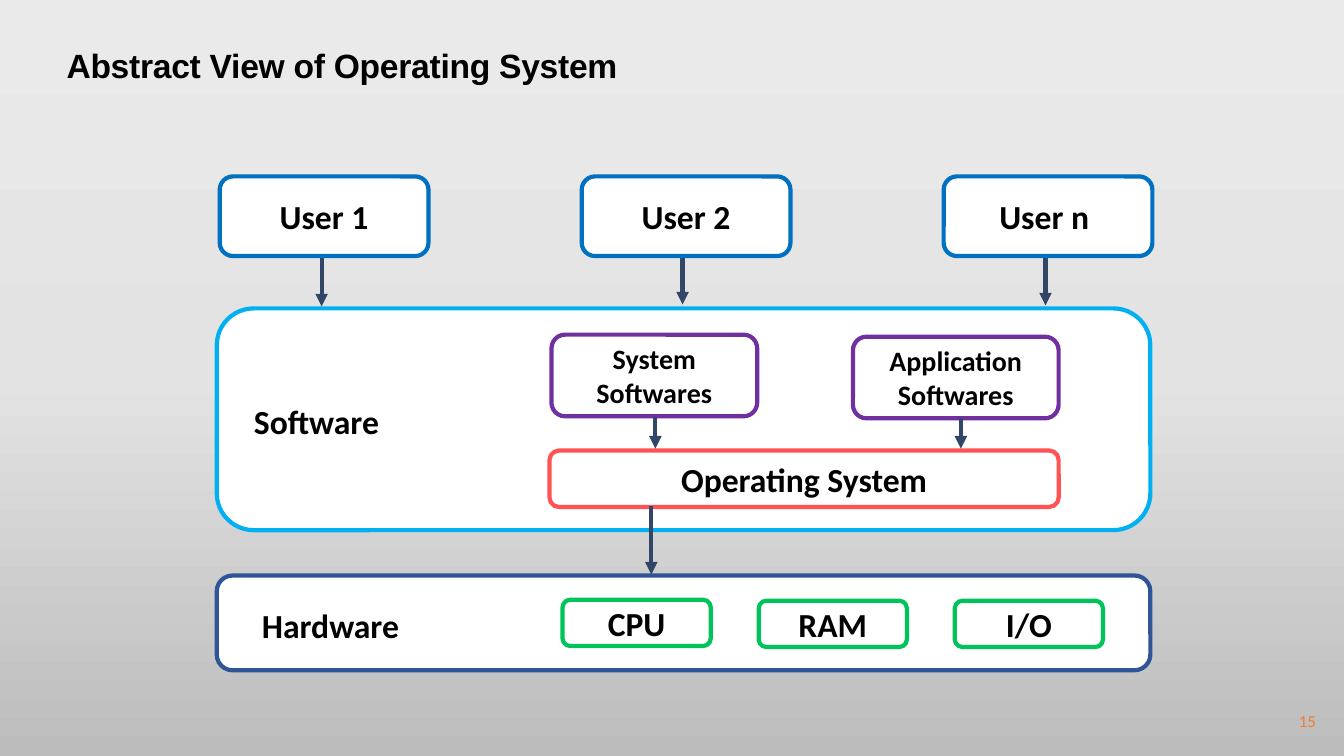
from copy import deepcopy
from dataclasses import dataclass

from lxml import etree
from pptx import Presentation
from pptx.dml.color import RGBColor
from pptx.enum.shapes import MSO_CONNECTOR, MSO_SHAPE
from pptx.enum.text import MSO_ANCHOR, MSO_AUTO_SIZE, PP_ALIGN
from pptx.oxml.ns import qn
from pptx.util import Inches, Length, Pt

ROUND = MSO_SHAPE.ROUNDED_RECTANGLE
STRAIGHT = MSO_CONNECTOR.STRAIGHT
TOP, MIDDLE = MSO_ANCHOR.TOP, MSO_ANCHOR.MIDDLE
LEFT, CENTER, RIGHT = PP_ALIGN.LEFT, PP_ALIGN.CENTER, PP_ALIGN.RIGHT
FIXED = MSO_AUTO_SIZE.NONE
TITLE_ONLY = 5
LINE = Pt(3)
BLACK, WHITE = "000000", "FFFFFF"


@dataclass
class Box:
    """A framed box, placed in grid columns and rows."""
    col: float
    row: float
    wide: float
    high: float
    line: str
    text: str = ""
    size: int = 24


@dataclass
class Arrow:
    """A downward arrow at one column, between two rows."""
    col: float
    start: float
    end: float


def grid(count: float) -> Length:
    """The grid has ten cells to the inch."""
    return Inches(count / 10)


def color(code: str) -> RGBColor:
    return RGBColor.from_string(code)


def place(shape, col: float, row: float, wide: float, high: float) -> None:
    shape.left, shape.top = grid(col), grid(row)
    shape.width, shape.height = grid(wide), grid(high)


def write(shape, text: str, *, size: int = 24, font: str = "Calibri",
          ink: str = BLACK, bold: bool = True, align=LEFT, anchor=TOP) -> None:
    frame = shape.text_frame
    frame.word_wrap = True
    frame.auto_size = FIXED
    frame.vertical_anchor = anchor
    frame.text = text
    for para in frame.paragraphs:
        para.alignment = align
        for run in para.runs:
            run.font.name, run.font.size = font, Pt(size)
            run.font.bold = bold
            run.font.color.rgb = color(ink)


def label(slide, text: str, col: float, row: float, wide: float,
          high: float, **style) -> None:
    area = slide.shapes.add_textbox(grid(col), grid(row), grid(wide), grid(high))
    write(area, text, **style)


def draw_box(slide, box: Box) -> None:
    shape = slide.shapes.add_shape(ROUND, grid(box.col), grid(box.row),
                                   grid(box.wide), grid(box.high))
    shape.shadow.inherit = False
    shape.fill.solid()
    shape.fill.fore_color.rgb = color(WHITE)
    shape.line.color.rgb = color(box.line)
    shape.line.width = LINE
    if box.text:
        write(shape, box.text, size=box.size, align=CENTER, anchor=MIDDLE)


def draw_arrow(slide, arrow: Arrow) -> None:
    link = slide.shapes.add_connector(STRAIGHT, grid(arrow.col), grid(arrow.start),
                                      grid(arrow.col), grid(arrow.end))
    link.line.color.rgb = color("324667")
    link.line.width = LINE
    etree.SubElement(link.line._get_or_add_ln(), qn("a:tailEnd"), type="triangle")
    etree.SubElement(link._element.spPr, qn("a:effectLst"))


def paint(slide) -> None:
    """Shade the background from light at the top to dark at the bottom."""
    fill = slide.background.fill
    fill.gradient()
    fill.gradient_angle = 270
    stops = slide.element.xpath(".//a:gsLst")[0]
    stops.insert(1, deepcopy(stops[0]))
    shades = [(0, "EBEAEA"), (0.5, "E4E3E3"), (1, "BDBCBC")]
    for stop, (share, code) in zip(fill.gradient_stops, shades):
        stop.position = share
        stop.color.rgb = color(code)


BANDS = [
    Box(21.5, 30.6, 92.6, 22, "00B0F0"),
    Box(21.5, 57.1, 92.6, 9.4, "2F5597"),
]
SOFTWARE = [
    Box(54.7, 33.2, 20.4, 8.1, "7030A0", "System\nSoftwares", 20),
    Box(84.6, 33.4, 20.4, 8.1, "7030A0", "Application\nSoftwares", 20),
    Box(54.5, 44.7, 50.5, 5.6, "FF5353", "Operating System"),
]
HARDWARE = [Box(55.8 + 19.45 * i, row, 14.7, 4.6, "00C459", name)
            for i, (name, row) in enumerate([("CPU", 59.5), ("RAM", 59.6), ("I/O", 59.6)])]
USERS = [Box(21.8 + 35.9 * i, 17.5, 20.7, 7.9, "0070C0", name)
         for i, name in enumerate(["User 1", "User 2", "User n "])]
ARROWS = [
    Arrow(31.9, 25.2, 30.4), Arrow(67.7, 24.9, 30.2), Arrow(103.7, 25.1, 30.3),
    Arrow(65, 41.4, 44.5), Arrow(95.3, 41.5, 44.5), Arrow(64.6, 50.2, 57),
]


def main() -> None:
    deck = Presentation()
    deck.slide_width, deck.slide_height = Inches(13.33), Inches(7.5)
    slide = deck.slides.add_slide(deck.slide_layouts[TITLE_ONLY])
    paint(slide)

    # Title and page number
    title = slide.shapes.title
    place(title, 5.6, 4, 112, 5)
    write(title, "Abstract View of Operating System", font="Arial")
    title.text_frame.paragraphs[0].runs[0].font._element.set("spc", "-20")
    label(slide, "15", 126.8, 69.5, 4.7, 4, size=12, ink="ED7D31",
          bold=False, align=RIGHT, anchor=MIDDLE)

    # Layers with their names and parts
    for band in BANDS:
        draw_box(slide, band)
    label(slide, "Software", 24.2, 39.3, 24, 5.2)
    label(slide, "Hardware", 25, 59.5, 24, 5.2)
    for box in SOFTWARE + HARDWARE:
        draw_box(slide, box)

    # Arrows end beneath the users' boxes
    for arrow in ARROWS:
        draw_arrow(slide, arrow)
    for user in USERS:
        draw_box(slide, user)

    deck.save("out.pptx")


if __name__ == "__main__":
    main()
